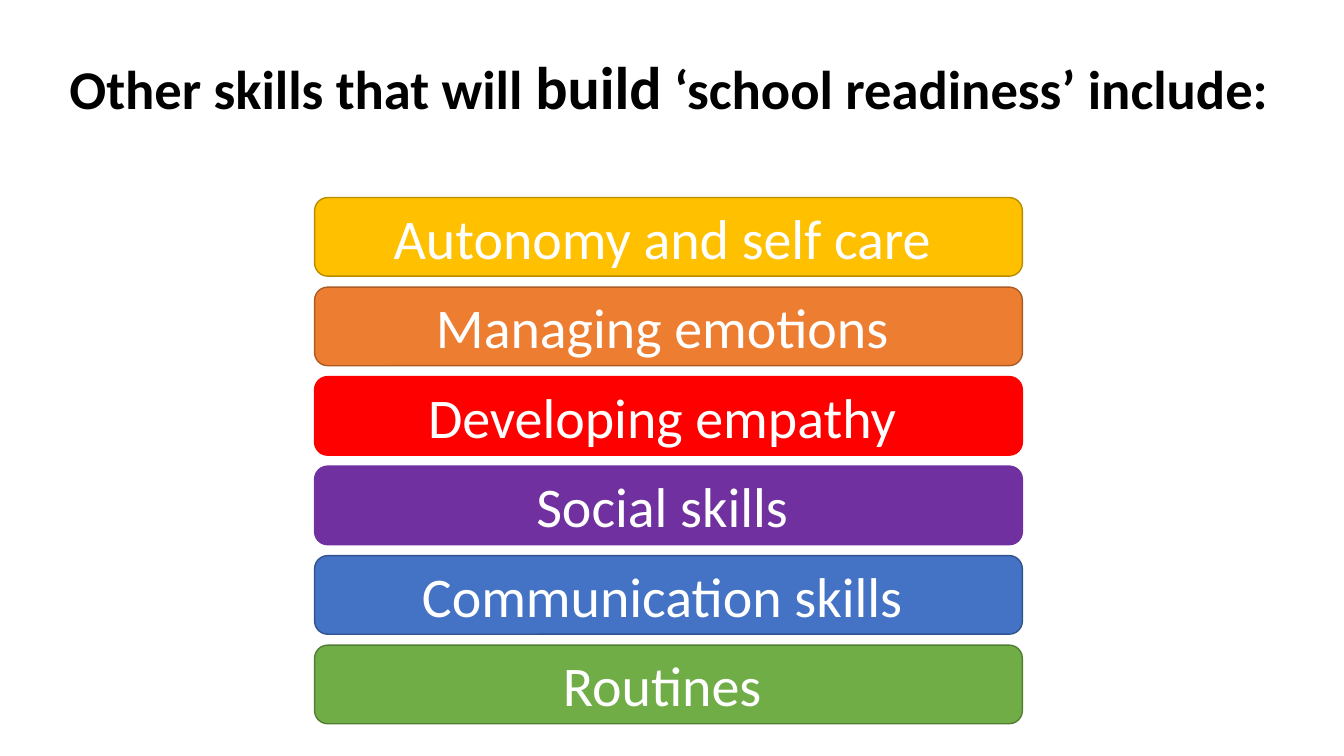
"""Build a slide listing the skills that support school readiness."""
from dataclasses import dataclass

from pptx import Presentation
from pptx.dml.color import RGBColor
from pptx.enum.shapes import MSO_SHAPE
from pptx.enum.text import MSO_ANCHOR, MSO_AUTO_SIZE, PP_ALIGN
from pptx.util import Inches, Pt


@dataclass(frozen=True)
class Theme:
    font: str = "Calibri"
    title_color: str = "000000"
    bar_text_color: str = "FFFFFF"
    title_size: int = 39
    emphasis_size: int = 43
    bar_size: int = 40
    line_width: int = 1
    amber: tuple = ("FFC000", "BA8C00")
    orange: tuple = ("ED7D31", "AC5B23")
    red: tuple = ("FF0000", "FF0000")
    purple: tuple = ("7030A0", "7030A0")
    blue: tuple = ("4472C4", "31538F")
    green: tuple = ("70AD47", "517E33")


class SlideBuilder:
    def __init__(self, slide, theme):
        self.slide = slide
        self.theme = theme

    def add_text(self, shape, runs, color, anchor, bold=False):
        frame = shape.text_frame
        frame.word_wrap = True
        frame.auto_size = MSO_AUTO_SIZE.NONE
        frame.vertical_anchor = anchor
        paragraph = frame.paragraphs[0]
        paragraph.alignment = PP_ALIGN.CENTER
        paragraph.line_spacing = 1.0
        paragraph.space_before = Pt(0)
        for text, size in runs:
            run = paragraph.add_run()
            run.text = text
            run.font.name = self.theme.font
            run.font.size = Pt(size)
            run.font.bold = bold
            run.font.color.rgb = RGBColor.from_string(color)

    def title(self, left, top, width, height, runs):
        shape = self.slide.shapes.title
        shape.left, shape.top = Inches(left), Inches(top)
        shape.width, shape.height = Inches(width), Inches(height)
        self.add_text(shape, runs, self.theme.title_color, MSO_ANCHOR.TOP, bold=True)

    def bar(self, left, top, width, height, text, colors):
        shape = self.slide.shapes.add_shape(
            MSO_SHAPE.ROUNDED_RECTANGLE,
            Inches(left), Inches(top), Inches(width), Inches(height),
        )
        fill_color, line_color = colors
        shape.shadow.inherit = False
        shape.fill.solid()
        shape.fill.fore_color.rgb = RGBColor.from_string(fill_color)
        shape.line.color.rgb = RGBColor.from_string(line_color)
        shape.line.width = Pt(self.theme.line_width)
        runs = [(text, self.theme.bar_size)]
        self.add_text(shape, runs, self.theme.bar_text_color, MSO_ANCHOR.MIDDLE)


def main():
    theme = Theme()
    presentation = Presentation()
    presentation.slide_width = Inches(13.33)
    presentation.slide_height = Inches(7.5)
    title_only = presentation.slide_layouts.get_by_name("Title Only")
    builder = SlideBuilder(presentation.slides.add_slide(title_only), theme)

    builder.title(0.51, 0.44, 12.25, 0.84, [
        ("Other skills that will ", theme.title_size),
        ("build", theme.emphasis_size),
        (" ‘school readiness’ include:", theme.title_size),
    ])

    skills = [
        ("Autonomy and self care ", theme.amber),
        ("Managing emotions ", theme.orange),
        ("Developing empathy ", theme.red),
        ("Social skills ", theme.purple),
        ("Communication skills ", theme.blue),
        ("Routines ", theme.green),
    ]
    first_top, last_top = 1.96, 6.4
    pitch = (last_top - first_top) / (len(skills) - 1)
    for index, (skill, colors) in enumerate(skills):
        builder.bar(3.12, first_top + index * pitch, 7.02, 0.78, skill, colors)

    presentation.save("out.pptx")


if __name__ == "__main__":
    main()
